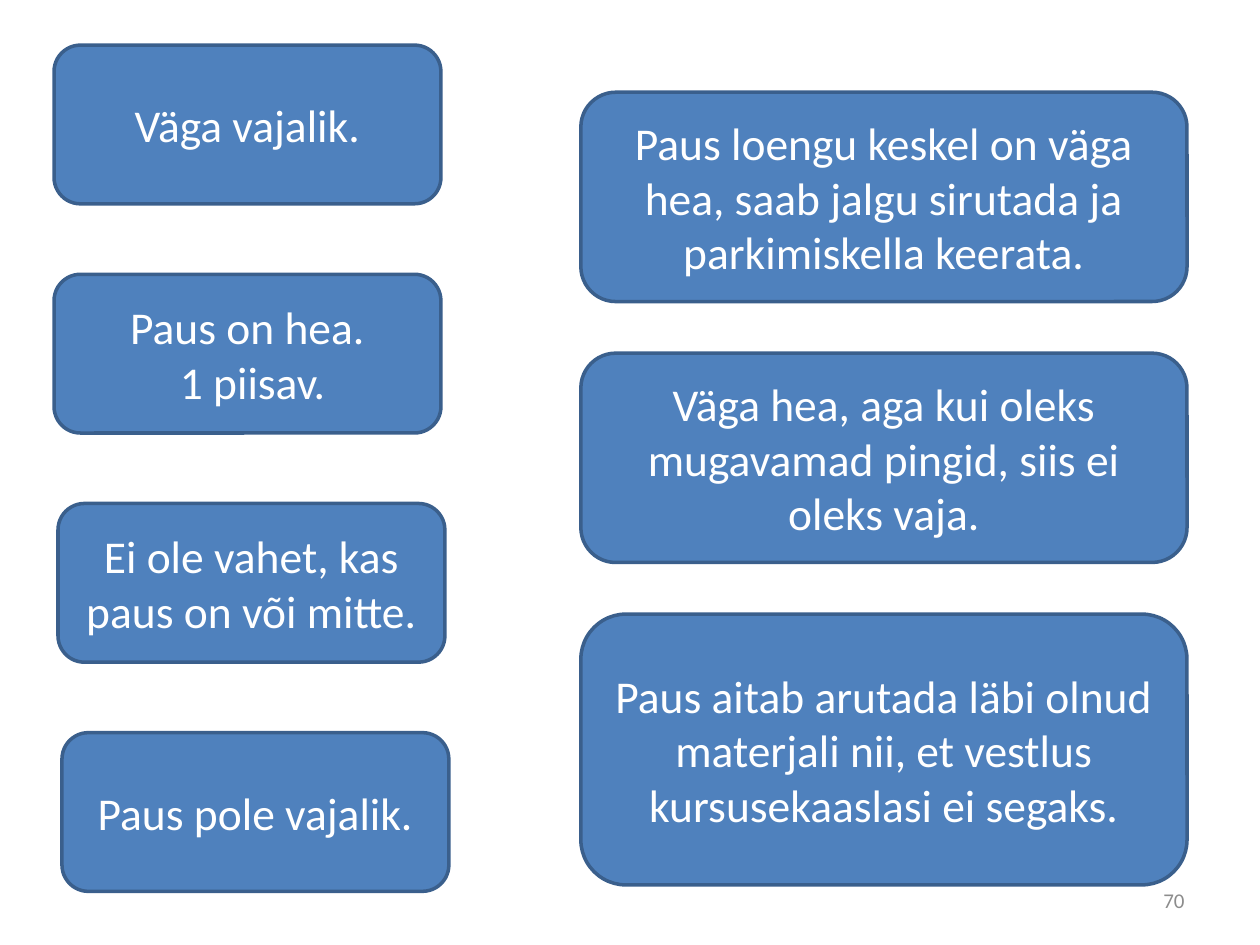
from pptx import Presentation
from pptx.dml.color import RGBColor
from pptx.enum.shapes import MSO_SHAPE
from pptx.enum.text import MSO_ANCHOR, PP_ALIGN
from pptx.util import Cm, Pt

ROUNDED = MSO_SHAPE.ROUNDED_RECTANGLE
MIDDLE = MSO_ANCHOR.MIDDLE
CENTER, RIGHT = PP_ALIGN.CENTER, PP_ALIGN.RIGHT
BLANK_LAYOUT = 6

FONT = "Calibri"
BLUE, DARK_BLUE, WHITE, GREY = "4F81BD", "3A5F8C", "FFFFFF", "8C8C8C"

# Left edge and text; "\v" is a line break
SHORT_ANSWERS = [
    (1.09, "Väga vajalik."),
    (1.09, "Paus on hea.\v 1 piisav."),
    (1.17, "Ei ole vahet, kas paus on või mitte."),
    (1.25, "Paus pole vajalik."),
]
# Height and text
LONG_ANSWERS = [
    (4.22, "Paus loengu keskel on väga hea, saab jalgu sirutada ja parkimiskella keerata."),
    (4.22, "Väga hea, aga kui oleks mugavamad pingid, siis ei oleks vaja."),
    (5.46, "Paus aitab arutada läbi olnud materjali nii, et vestlus kursusekaaslasi ei segaks."),
]


def color(hex_string):
    return RGBColor.from_string(hex_string)


def write_text(shape, text, size, font_color, alignment):
    text_frame = shape.text_frame
    text_frame.word_wrap = True
    text_frame.vertical_anchor = MIDDLE
    text_frame.text = text
    paragraph = text_frame.paragraphs[0]
    paragraph.alignment = alignment
    for run in paragraph.runs:
        run.font.name = FONT
        run.font.size = Pt(size)
        run.font.color.rgb = color(font_color)


def add_answer_box(slide, left, top, width, height, text):
    shape = slide.shapes.add_shape(ROUNDED, Cm(left), Cm(top), Cm(width), Cm(height))
    shape.shadow.inherit = False
    shape.fill.solid()
    shape.fill.fore_color.rgb = color(BLUE)
    shape.line.color.rgb = color(DARK_BLUE)
    shape.line.width = Pt(2)
    write_text(shape, text, 26, WHITE, CENTER)


def add_page_number(slide, number):
    text_box = slide.shapes.add_textbox(Cm(18.2), Cm(17.65), Cm(5.93), Cm(1.01))
    write_text(text_box, number, 12, GREY, RIGHT)


def main():
    presentation = Presentation()
    presentation.slide_width, presentation.slide_height = Cm(25.4), Cm(19.05)
    slide = presentation.slides.add_slide(presentation.slide_layouts[BLANK_LAYOUT])

    add_page_number(slide, "70")
    for row, (left, text) in enumerate(SHORT_ANSWERS):
        add_answer_box(slide, left, 0.91 + row * 4.62, 7.8, 3.2, text)
    for row, (height, text) in enumerate(LONG_ANSWERS):
        add_answer_box(slide, 11.71, 1.86 + row * 5.26, 12.22, height, text)

    presentation.save("out.pptx")


if __name__ == "__main__":
    main()
